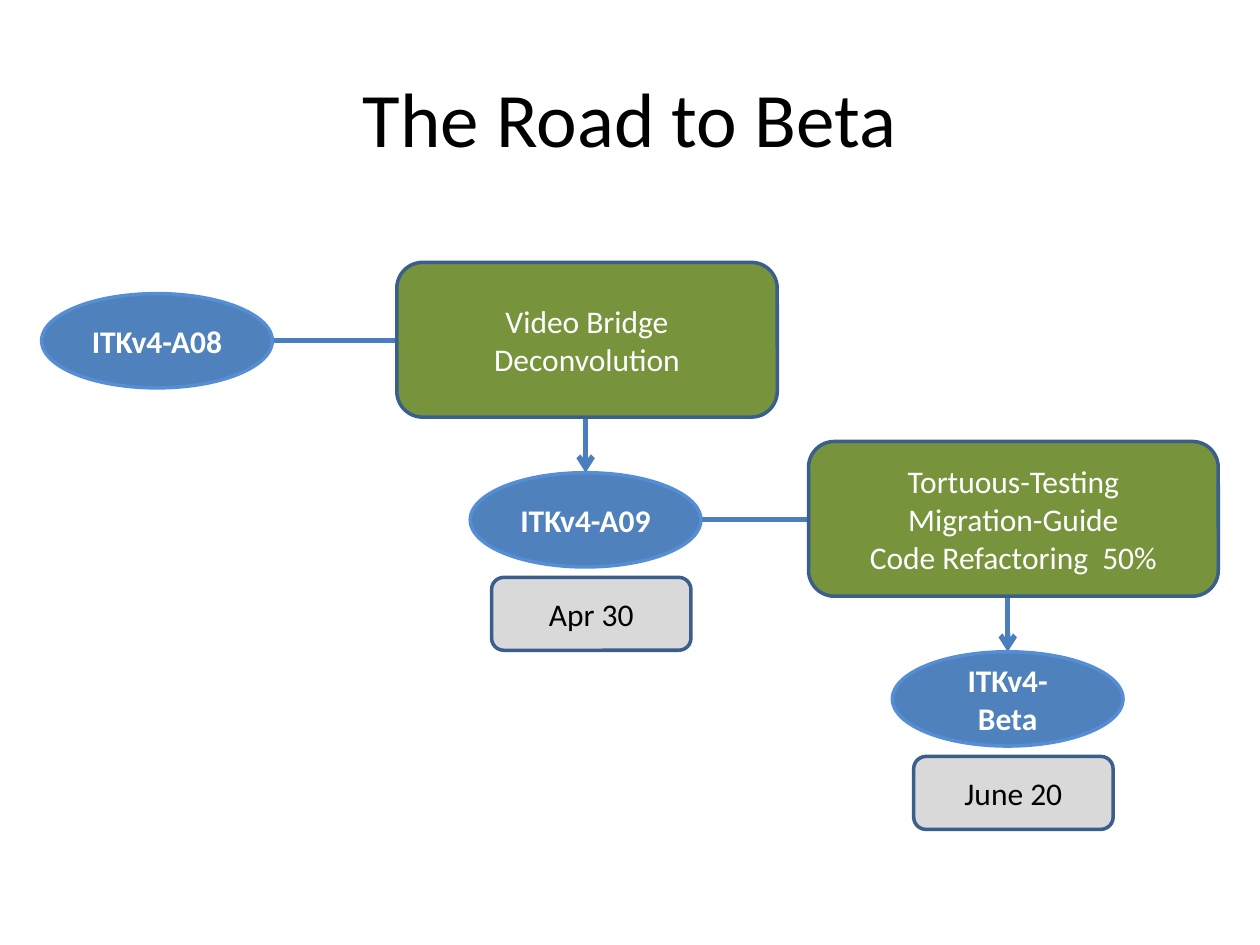
from dataclasses import dataclass

from lxml.etree import SubElement
from pptx import Presentation
from pptx.dml.color import RGBColor
from pptx.enum.shapes import MSO_CONNECTOR, MSO_SHAPE
from pptx.enum.text import MSO_ANCHOR, PP_ALIGN
from pptx.oxml.ns import qn
from pptx.util import Cm, Pt

FONT = "Calibri"
COLORS = {
    "milestone": "4F81BD",
    "milestone_line": "558ED5",
    "connector": "4B7EBC",
    "task": "77933C",
    "date": "D9D9D9",
    "box_line": "3A5F8C",
    "light_text": "FFFFFF",
    "dark_text": "000000",
}

# Lengths in centimetres
MILESTONE_WIDTH, MILESTONE_HEIGHT = 4.65, 1.9
FIRST_TOP, STEP = 5.92, 3.61
TASK_HEIGHT, TASK_RISE = 3.12, 0.63
DATE_WIDTH, DATE_HEIGHT = 4.02, 1.47
DATE_INDENT, DATE_DROP = 0.43, 2.11


@dataclass(frozen=True)
class Style:
    geometry: MSO_SHAPE
    fill: str
    line: str
    text: str
    bold: bool = False


@dataclass(frozen=True)
class Box:
    left: float
    top: float
    width: float
    height: float


@dataclass(frozen=True)
class Milestone:
    name: str
    left: float
    row: int
    date: str = ""

    @property
    def box(self) -> Box:
        top = FIRST_TOP + self.row * STEP
        return Box(self.left, top, MILESTONE_WIDTH, MILESTONE_HEIGHT)


@dataclass(frozen=True)
class Task:
    lines: tuple[str, ...]
    left: float
    width: float
    row: int


MILESTONE_STYLE = Style(MSO_SHAPE.OVAL, "milestone", "milestone_line", "light_text", True)
TASK_STYLE = Style(MSO_SHAPE.ROUNDED_RECTANGLE, "task", "box_line", "light_text")
DATE_STYLE = Style(MSO_SHAPE.ROUNDED_RECTANGLE, "date", "box_line", "dark_text")

MILESTONES = (
    Milestone("ITKv4-A08", 0.84, 0),
    Milestone("ITKv4-A09", 9.48, 1, "Apr 30"),
    Milestone("ITKv4-Beta", 17.99, 2, "June 20"),
)
TASKS = (
    Task(("Video Bridge", "Deconvolution"), 8.0, 7.67, 0),
    Task(("Tortuous-Testing", "Migration-Guide", "Code Refactoring  50%"), 16.3, 8.26, 1),
)


def color(name: str) -> RGBColor:
    return RGBColor.from_string(COLORS[name])


def add_box(slide, box: Box, lines: tuple[str, ...], style: Style) -> None:
    shape = slide.shapes.add_shape(
        style.geometry, Cm(box.left), Cm(box.top), Cm(box.width), Cm(box.height)
    )
    shape.shadow.inherit = False
    shape.fill.solid()
    shape.fill.fore_color.rgb = color(style.fill)
    shape.line.color.rgb = color(style.line)
    shape.line.width = Pt(2)
    frame = shape.text_frame
    frame.word_wrap = True
    frame.vertical_anchor = MSO_ANCHOR.MIDDLE
    frame.text = "\n".join(lines)
    for paragraph in frame.paragraphs:
        paragraph.alignment = PP_ALIGN.CENTER
        paragraph.font.name = FONT
        paragraph.font.size = Pt(18)
        paragraph.font.bold = style.bold
        paragraph.font.color.rgb = color(style.text)


def add_bent_arrow(slide, start: Box, end: Box) -> None:
    """Run right from the start box, then down to the top of the end box."""
    connector = slide.shapes.add_connector(
        MSO_CONNECTOR.ELBOW,
        Cm(start.left + start.width),
        Cm(start.top + start.height / 2),
        Cm(end.left + end.width / 2),
        Cm(end.top),
    )
    connector.line.color.rgb = color("connector")
    connector.line.width = Pt(3)
    properties = connector._element.spPr
    properties.find(qn("a:prstGeom")).set("prst", "bentConnector2")
    SubElement(properties.find(qn("a:ln")), qn("a:tailEnd"), type="arrow")
    SubElement(properties, qn("a:effectLst"))


def add_title(slide, text: str) -> None:
    title = slide.shapes.title
    title.left, title.top, title.width, title.height = Cm(1.27), Cm(0.76), Cm(22.86), Cm(3.18)
    title.text_frame.text = text
    title.text_frame.vertical_anchor = MSO_ANCHOR.MIDDLE
    paragraph = title.text_frame.paragraphs[0]
    paragraph.alignment = PP_ALIGN.CENTER
    paragraph.font.name = FONT
    paragraph.font.size = Pt(44)
    paragraph.font.color.rgb = color("dark_text")


def main() -> None:
    presentation = Presentation()
    presentation.slide_width, presentation.slide_height = Cm(25.4), Cm(19.05)
    slide = presentation.slides.add_slide(presentation.slide_layouts[5])
    add_title(slide, "The Road to Beta")

    for start, end in zip(MILESTONES, MILESTONES[1:]):
        add_bent_arrow(slide, start.box, end.box)
    for milestone in MILESTONES:
        box = milestone.box
        add_box(slide, box, (milestone.name,), MILESTONE_STYLE)
        if milestone.date:
            date_box = Box(
                box.left + DATE_INDENT, box.top + DATE_DROP, DATE_WIDTH, DATE_HEIGHT
            )
            add_box(slide, date_box, (milestone.date,), DATE_STYLE)
    for task in TASKS:
        top = FIRST_TOP + task.row * STEP - TASK_RISE
        add_box(slide, Box(task.left, top, task.width, TASK_HEIGHT), task.lines, TASK_STYLE)

    presentation.save("out.pptx")


if __name__ == "__main__":
    main()
